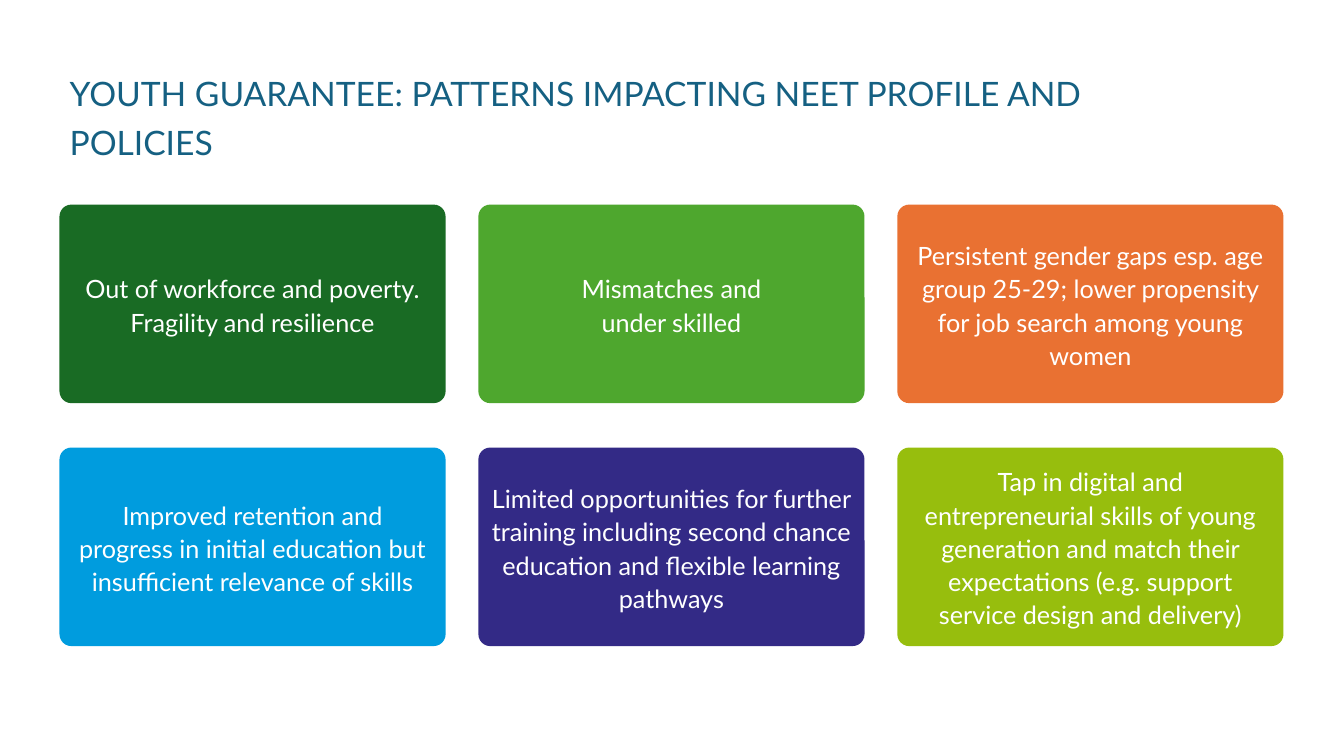
from pptx import Presentation
from pptx.dml.color import RGBColor
from pptx.enum.shapes import MSO_SHAPE as Shape
from pptx.enum.text import MSO_ANCHOR as Anchor, PP_ALIGN as Align
from pptx.util import Inches, Pt

FONT = "Lato"
WHITE = RGBColor(0xFF, 0xFF, 0xFF)
TEAL = RGBColor(0x15, 0x60, 0x82)
FOREST = RGBColor(0x19, 0x6B, 0x24)
GREEN = RGBColor(0x4E, 0xA7, 0x2E)
ORANGE = RGBColor(0xE9, 0x71, 0x32)
BLUE = RGBColor(0x00, 0x9C, 0xDE)
INDIGO = RGBColor(0x33, 0x2A, 0x86)
LIME = RGBColor(0x97, 0xBE, 0x0D)

TITLE = "YOUTH GUARANTEE: PATTERNS IMPACTING NEET PROFILE AND POLICIES"
CARDS = [
    ("Out of workforce and poverty. Fragility and resilience", FOREST),
    ("Mismatches and\nunder skilled", GREEN),
    ("Persistent gender gaps esp. age group 25-29; lower propensity "
     "for job search among young women", ORANGE),
    ("Improved retention and progress in initial education but "
     "insufficient relevance of skills", BLUE),
    ("Limited opportunities for further training including second chance "
     "education and flexible learning pathways", INDIGO),
    ("Tap in digital and entrepreneurial skills of young generation and "
     "match their expectations (e.g. support service design and delivery)", LIME),
]


def write(shape, text, size, color, align, pitch):
    frame = shape.text_frame
    frame.text = text
    frame.word_wrap = True
    frame.vertical_anchor = Anchor.MIDDLE
    for para in frame.paragraphs:
        para.alignment = align
        para.line_spacing = pitch
        for run in para.runs:
            run.font.name = FONT
            run.font.size = Pt(size)
            run.font.color.rgb = color


def add_title(slide, left, top, width, height):
    title = slide.shapes.title
    title.left, title.top = Inches(left), Inches(top)
    title.width, title.height = Inches(width), Inches(height)
    write(title, TITLE, 24, TEAL, Align.LEFT, 1.2)


def add_card(slide, text, fill, left, top, width, height):
    card = slide.shapes.add_shape(
        Shape.ROUNDED_RECTANGLE,
        Inches(left), Inches(top), Inches(width), Inches(height))
    card.adjustments[0] = 0.06
    card.shadow.inherit = False
    card.fill.solid()
    card.fill.fore_color.rgb = fill
    card.line.fill.background()
    write(card, text, 18, WHITE, Align.CENTER, 1.1)


def add_grid(slide, left, top, width, height, cols=3, rows=2):
    wide, high = 3.83, 1.97
    across = (width - wide) / (cols - 1)
    down = (height - high) / (rows - 1)
    for i, (text, fill) in enumerate(CARDS):
        row, col = divmod(i, cols)
        add_card(slide, text, fill,
                 left + col * across, top + row * down, wide, high)


def main():
    deck = Presentation()
    deck.slide_width, deck.slide_height = Inches(13.33), Inches(7.5)
    slide = deck.slides.add_slide(deck.slide_layouts[5])
    add_title(slide, 0.59, 0.58, 11.5, 1.09)
    add_grid(slide, 0.59, 2.03, 12.14, 4.38)
    deck.save("out.pptx")


if __name__ == "__main__":
    main()
